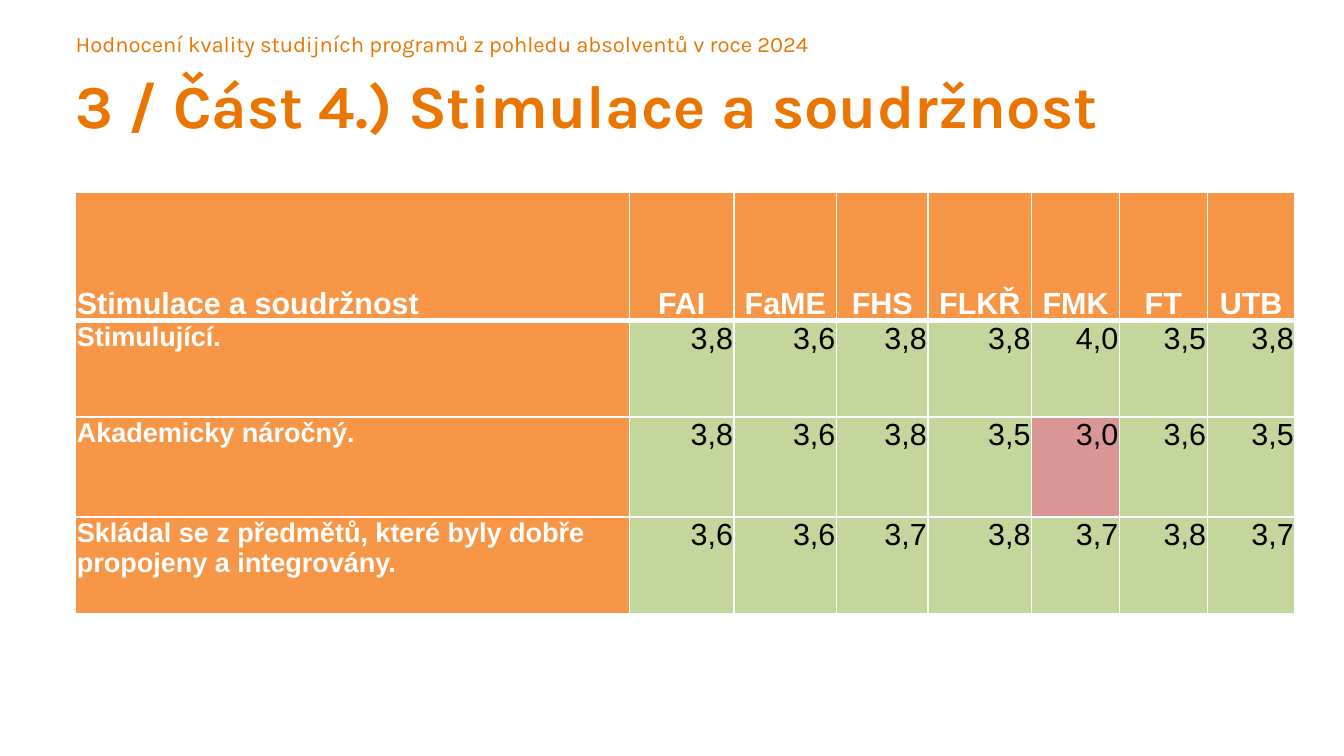
from lxml import etree
from pptx import Presentation
from pptx import util as u
from pptx.dml import color
from pptx.enum import text
from pptx.oxml import ns

COLORS = {"title": "EA7500", "head": "F79646", "good": "C3D69B",
          "low": "D99694", "white": "FFFFFF", "black": "000000"}
LOW_LIMIT = 3.5
LEFT = 0.62
COLS = [4.54, 0.86, 0.84, 0.75, 0.85, 0.72, 0.72, 0.72]
ROWS = [1.05, 0.79, 0.82, 0.79]
HEADER = ["Stimulace a soudržnost", "FAI", "FaME", "FHS", "FLKŘ", "FMK", "FT", "UTB"]
RATINGS = [
    ("Stimulující.", [3.8, 3.6, 3.8, 3.8, 4.0, 3.5, 3.8]),
    ("Akademicky náročný.", [3.8, 3.6, 3.8, 3.5, 3.0, 3.6, 3.5]),
    ("Skládal se z předmětů, které byly dobře propojeny a integrovány.",
     [3.6, 3.6, 3.7, 3.8, 3.7, 3.8, 3.7]),
]


def rgb(name):
    return color.RGBColor.from_string(COLORS[name])


def write(tf, words, size=18, font="Arial", ink="white", bold=False,
          align=text.PP_ALIGN.LEFT, spacing=None):
    tf.word_wrap = True
    p = tf.paragraphs[0]
    p.alignment = align
    p.line_spacing = spacing
    r = p.add_run()
    r.text = words
    r.font.size = u.Pt(size)
    r.font.name = font
    r.font.bold = bold
    r.font.color.rgb = rgb(ink)


def add_text(s, left, top, width, height, words, **fmt):
    tf = s.shapes.add_textbox(*map(u.Inches, (left, top, width, height))).text_frame
    tf.margin_left = tf.margin_right = tf.margin_top = tf.margin_bottom = 0
    write(tf, words, **fmt)


def add_borders(cell, **widths):
    tcPr = cell._tc.get_or_add_tcPr()
    for side in "LRTB":
        ln = etree.SubElement(tcPr, ns.qn("a:ln" + side), w=str(u.Pt(widths.get(side, 1))))
        fill = etree.SubElement(ln, ns.qn("a:solidFill"))
        etree.SubElement(fill, ns.qn("a:srgbClr"), val=COLORS["white"])


def fill_cell(cell, words, fill, borders, side=0.01, top=0.01,
              anchor=text.MSO_ANCHOR.TOP, **fmt):
    add_borders(cell, **borders)
    cell.fill.solid()
    cell.fill.fore_color.rgb = rgb(fill)
    cell.margin_left = cell.margin_right = u.Inches(side)
    cell.margin_top = u.Inches(top)
    cell.margin_bottom = 0
    cell.vertical_anchor = anchor
    write(cell.text_frame, words, **fmt)


def add_ratings(s, left, top):
    frame = s.shapes.add_table(len(ROWS), len(COLS), u.Inches(left), u.Inches(top),
                               u.Inches(sum(COLS)), u.Inches(sum(ROWS)))
    table = frame.table
    for col, width in zip(table.columns, COLS):
        col.width = u.Inches(width)
    for row, height in zip(table.rows, ROWS):
        row.height = u.Inches(height)

    for c, name in enumerate(HEADER):
        place = dict(side=0.05, top=0, align=text.PP_ALIGN.CENTER) if c else {}
        fill_cell(table.cell(0, c), name, "head", {"B": 3}, bold=True, spacing=1.5,
                  anchor=text.MSO_ANCHOR.BOTTOM, **place)

    for r, (label, scores) in enumerate(RATINGS, 1):
        borders = {"T": 3} if r == 1 else {}
        fill_cell(table.cell(r, 0), label, "head", borders, size=16, bold=True)
        for c, score in enumerate(scores, 1):
            fill_cell(table.cell(r, c), f"{score:.1f}".replace(".", ","),
                      "low" if score < LOW_LIMIT else "good", borders,
                      ink="black", align=text.PP_ALIGN.RIGHT)


def main():
    prs = Presentation()
    prs.slide_width, prs.slide_height = u.Inches(11.02), u.Inches(6.2)
    s = prs.slides.add_slide(prs.slide_layouts[6])
    add_text(s, LEFT, 0.25, 9.92, 0.22,
             "Hodnocení kvality studijních programů z pohledu absolventů v roce 2024",
             size=13, font="Karla", ink="title")
    add_text(s, LEFT, 0.55, 10.18, 0.61, "3 / Část 4.) Stimulace a soudržnost",
             size=36, font="Karla", ink="title", bold=True)
    add_ratings(s, LEFT, 1.58)
    prs.save("out.pptx")


if __name__ == "__main__":
    main()
